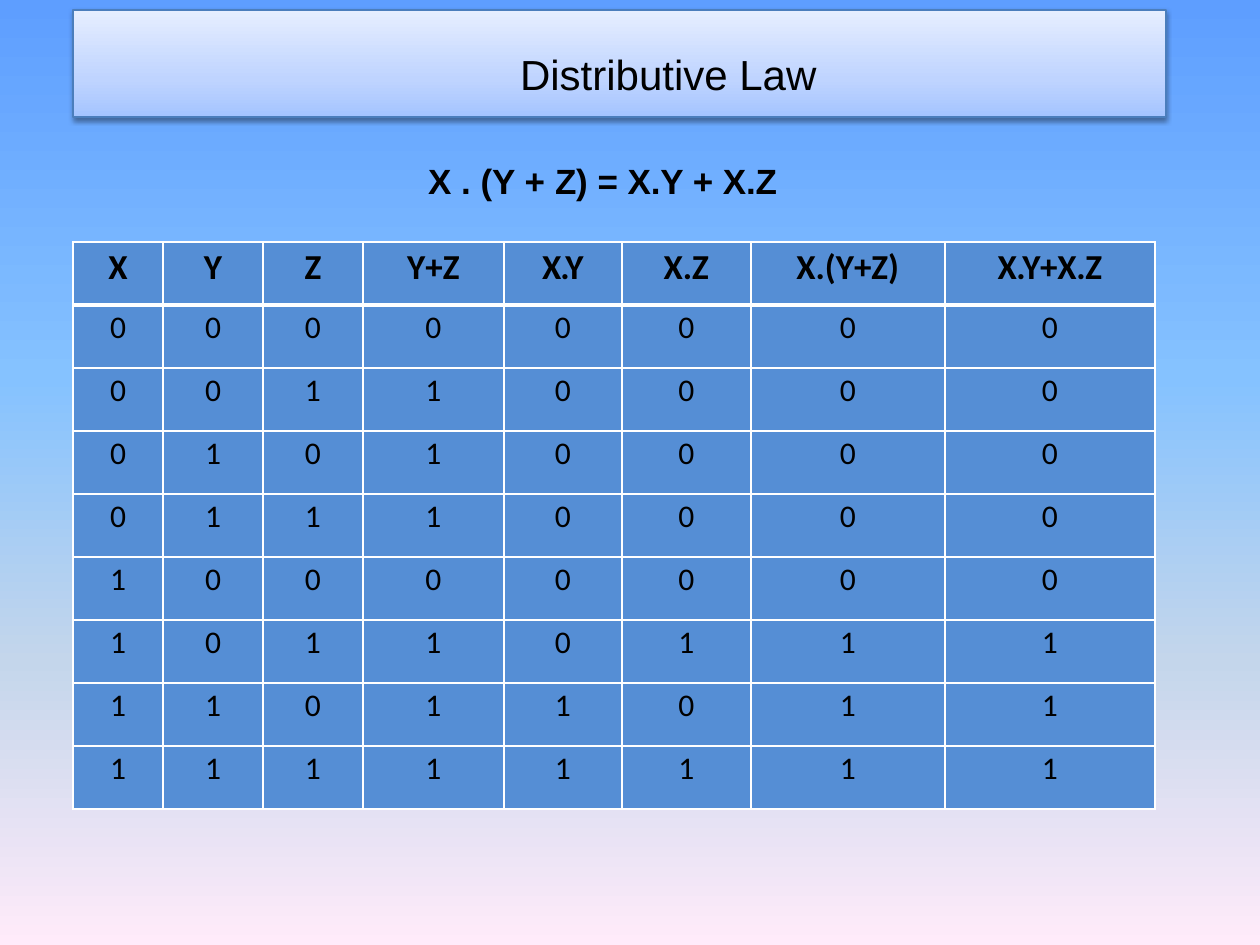
from lxml.etree import SubElement
from pptx import Presentation
from pptx.dml.color import RGBColor
from pptx.enum.shapes import MSO_SHAPE as Shape
from pptx.enum.text import MSO_ANCHOR as Anchor, PP_ALIGN as Align
from pptx.oxml.ns import qn
from pptx.util import Pt

TITLE = "Distributive Law"
FORMULA = [("X . (Y + ", 0), ("Z) ", -10), ("= ", 0), ("X.Y ", -10), ("+ ", 0), ("X.Z", -10)]
HEADERS = [("X", 0), ("Y", 0), ("Z", 0), ("Y+Z", 0),
           ("X.Y", -60), ("X.Z", 0), ("X.(Y+Z)", 0), ("X.Y+X.Z", -20)]
TRUTH_ROWS = ["00000000", "00110000", "01010000", "01110000",
              "10000000", "10110111", "11011011", "11111111"]

COLORS = {"text": "000000", "cell": "558ED5", "grid": "FFFFFF", "edge": "4B7EBC"}
SKY = [(0, "5E9EFF"), (40, "85C2FF"), (70, "C4D6EB"), (100, "FFEBFA")]
BANNER = [(0, "A4C4FF"), (35, "BFD4FF"), (100, "E6EEFF")]
COLUMN_WIDTHS = [90, 100, 100, 141, 118, 129, 194, 210]
ROW_HEIGHT = 63

TITLE_FONT = {"name": "Arial", "size": Pt(24), "bold": False}
FORMULA_FONT = {"name": "Arial", "size": Pt(20), "bold": True}
HEADER_FONT = {"name": "Calibri", "size": Pt(20), "bold": True}
BODY_FONT = {"name": "Calibri", "size": Pt(18), "bold": False}


def px(value):
    return value * 914400 // 126


def set_all(target, values):
    for name, value in values.items():
        setattr(target, name, value)


def add_color(parent, color):
    return SubElement(parent, qn("a:srgbClr"), val=COLORS.get(color, color))


def paint_gradient(fill, element, stops, angle):
    fill.gradient()
    fill.gradient_angle = angle
    stop_list = next(element.iter(qn("a:gsLst")))
    for stop in list(stop_list):
        stop_list.remove(stop)
    for position, color in stops:
        add_color(SubElement(stop_list, qn("a:gs"), pos=str(position * 1000)), color)


def write(frame, spans, font, align, left=0, top=0):
    set_all(frame, {"margin_left": px(left), "margin_top": px(top),
                    "margin_right": 0, "margin_bottom": 0, "word_wrap": True})
    para = frame.paragraphs[0]
    para.alignment = align
    for text, spacing in spans:
        span = para.add_run()
        span.text = text
        set_all(span.font, font)
        span.font.color.rgb = RGBColor.from_string(COLORS["text"])
        if spacing:
            span.font._element.set("spc", str(spacing))


def add_border(cell, side, points):
    line = SubElement(cell._tc.get_or_add_tcPr(), qn(f"a:{side}"), w=str(Pt(points)))
    add_color(SubElement(line, qn("a:solidFill")), "grid")


def add_banner(page):
    box = page.shapes.add_shape(Shape.RECTANGLE, px(73), px(10), px(1093), px(107))
    paint_gradient(box.fill, box.element, BANNER, 90)
    box.line.color.rgb = RGBColor.from_string(COLORS["edge"])
    box.line.width = Pt(0.75)
    box.shadow.inherit = False
    effects = box.element.spPr.find(qn("a:effectLst"))
    shadow = SubElement(effects, qn("a:outerShdw"), blurRad=str(Pt(3.1)),
                        dist=str(Pt(1.6)), dir="5400000", rotWithShape="0")
    SubElement(add_color(shadow, "text"), qn("a:alpha"), val="38000")
    write(box.text_frame, [(TITLE, 0)], TITLE_FONT, Align.LEFT, left=447, top=20)
    box.text_frame.vertical_anchor = Anchor.MIDDLE


def add_formula(page):
    box = page.shapes.add_textbox(px(21), px(147), px(1113), px(53))
    write(box.text_frame, FORMULA, FORMULA_FONT, Align.LEFT, left=407, top=13)


def add_truth_table(page):
    rows = [HEADERS] + [[(digit, 0) for digit in row] for row in TRUTH_ROWS]
    table = page.shapes.add_table(len(rows), len(HEADERS), px(73), px(242),
                                  px(sum(COLUMN_WIDTHS)), px(ROW_HEIGHT * len(rows))).table
    set_all(table, {"first_row": False, "horz_banding": False})
    for column, width in zip(table.columns, COLUMN_WIDTHS):
        column.width = px(width)
    for i, row in enumerate(rows):
        table.rows[i].height = px(ROW_HEIGHT)
        borders = {"lnL": 1, "lnR": 1, "lnT": 3 if i == 1 else 1, "lnB": 3 if i == 0 else 1}
        for j, entry in enumerate(row):
            cell = table.cell(i, j)
            write(cell.text_frame, [entry], BODY_FONT if i else HEADER_FONT, Align.CENTER)
            set_all(cell, {"margin_left": 0, "margin_top": px(4),
                           "margin_right": 0, "margin_bottom": 0})
            for side, points in borders.items():
                add_border(cell, side, points)
            cell.fill.solid()
            cell.fill.fore_color.rgb = RGBColor.from_string(COLORS["cell"])


def main():
    deck = Presentation()
    set_all(deck, {"slide_width": px(1260), "slide_height": px(945)})
    page = deck.slides.add_slide(deck.slide_layouts[6])
    paint_gradient(page.background.fill, page.element, SKY, 270)
    add_banner(page)
    add_formula(page)
    add_truth_table(page)
    deck.save("out.pptx")


if __name__ == "__main__":
    main()
